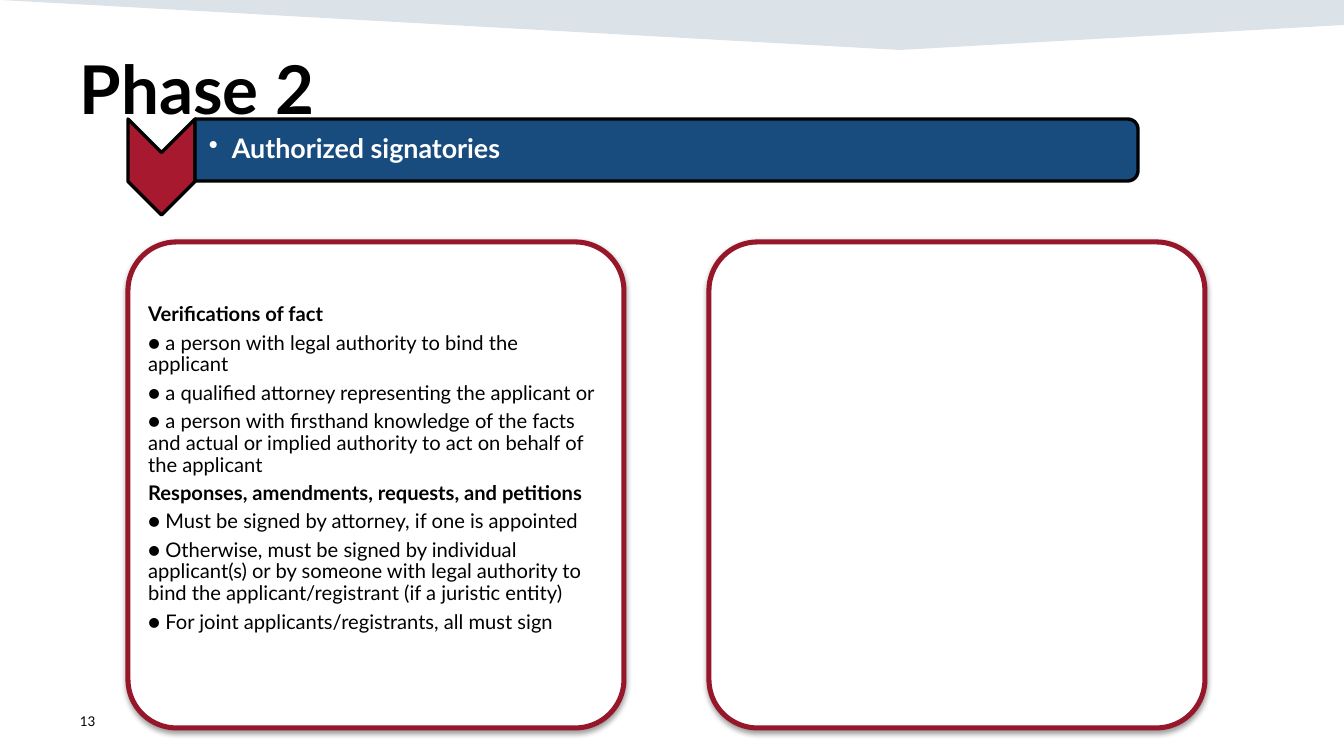
from lxml.etree import SubElement
from pptx import Presentation
from pptx.dml.color import RGBColor
from pptx.enum.shapes import MSO_SHAPE as Kind
from pptx.enum.text import MSO_ANCHOR as Anchor
from pptx.oxml import parse_xml
from pptx.oxml.ns import nsdecls, qn
from pptx.util import Pt

SCALE = 914400 / 121
WIDE, HIGH = 1344, 756
RULES = [
    ("Verifications of fact", True),
    ("● a person with legal authority to bind the applicant", False),
    ("● a qualified attorney representing the applicant or", False),
    ("● a person with firsthand knowledge of the facts and actual or implied "
     "authority to act on behalf of the applicant", False),
    ("Responses, amendments, requests, and petitions", True),
    ("● Must be signed by attorney, if one is appointed", False),
    ("● Otherwise, must be signed by individual applicant(s) or by someone with "
     "legal authority to bind the applicant/registrant (if a juristic entity)", False),
    ("● For joint applicants/registrants, all must sign", False),
]


def px(n):
    """Turn px into EMU."""
    return round(n * SCALE)


def tint(code):
    """Turn a hex string into a colour."""
    return RGBColor.from_string(code)


def paint(shape, fill, line=None, width=0, alpha=100):
    """Set the fill and outline of a shape and drop its theme shadow."""
    shape.shadow.inherit = False
    shape.fill.solid()
    shape.fill.fore_color.rgb = tint(fill)
    if alpha < 100:
        clr = shape._element.spPr.find(qn("a:solidFill")).find(qn("a:srgbClr"))
        SubElement(clr, qn("a:alpha"), val=str(alpha * 1000))
    if line:
        shape.line.color.rgb = tint(line)
        shape.line.width = Pt(width)
    else:
        shape.line.fill.background()


def place(shape, box):
    """Move a shape to a px box."""
    shape.left, shape.top, shape.width, shape.height = map(px, box)


def write(shape, rows, size, color="000000", inset=(12, 6, 12, 6),
          anchor=Anchor.MIDDLE, lead=None, after=None):
    """Fill a shape with rows of text and bold flag, and return its frame."""
    frame = shape.text_frame
    frame.word_wrap = True
    frame.vertical_anchor = anchor
    (frame.margin_left, frame.margin_top,
     frame.margin_right, frame.margin_bottom) = map(px, inset)
    for i, (text, bold) in enumerate(rows):
        para = frame.add_paragraph() if i else frame.paragraphs[0]
        para.alignment = 1
        para.line_spacing = lead
        if after is not None:
            para.space_after = Pt(after)
        run = para.add_run()
        run.text = text
        font = run.font
        font.name, font.size, font.bold = "Lato", Pt(size), bold
        font.color.rgb = tint(color)
    return frame


def turn(slide, kind, box):
    """Add a shape turned by 90 degrees that shows in the given box."""
    x, y, w, h = box
    shape = slide.shapes.add_shape(kind, 0, 0, 0, 0)
    place(shape, (x + (w - h) / 2, y + (h - w) / 2, h, w))
    shape.rotation = 90
    return shape


def wing(slide, box):
    """Draw the pale wedge along the top edge."""
    x, y, w, h = box
    pen = slide.shapes.build_freeform(x, y, SCALE)
    pen.add_line_segments([(x + w, y), (x + w, y + h // 2), (x + 900, y + h)])
    paint(pen.convert_to_shape(), "164469", alpha=15)


def head(slide, box):
    """Set the slide title."""
    title = slide.shapes.title
    place(title, box)
    write(title, [("Phase 2", True)], 40, anchor=Anchor.TOP, lead=1.0, after=0)


def banner(slide, box):
    """Draw the chevron and the bar with its bulleted label."""
    x, y, w, h = box
    tip = 67
    mark = turn(slide, Kind.CHEVRON, (x, y, tip, 96))
    paint(mark, "A6192E", "000000", 2)
    bar = (x + tip, y, w - tip, h)
    paint(turn(slide, Kind.ROUND_2_SAME_RECTANGLE, bar), "003971", "000000", 2, 90)
    label = slide.shapes.add_textbox(0, 0, 0, 0)
    place(label, (x + tip, y + 3, w - tip - 3, h - 6))
    frame = write(label, [("Authorized signatories", True)], 16, "FFFFFF",
                  (14, 1, 1, 1), lead=0.9)
    props = frame.paragraphs[0]._p.get_or_add_pPr()
    props.set("marL", str(px(23)))
    props.set("indent", str(px(-23)))
    SubElement(props, qn("a:buChar"), char="•")


def panel(slide, box, rows=()):
    """Draw a rounded panel with a soft shadow and optional text."""
    card = slide.shapes.add_shape(Kind.ROUNDED_RECTANGLE, *map(px, box))
    card.adjustments[0] = 0.1
    paint(card, "FFFFFF", "97172A", 3)
    glow = parse_xml(
        f'<a:outerShdw {nsdecls("a")} blurRad="{Pt(3.1)}" dist="{Pt(1.6)}" '
        'dir="5400000" rotWithShape="0"><a:srgbClr val="000000">'
        '<a:alpha val="38000"/></a:srgbClr></a:outerShdw>')
    card._element.spPr.find(qn("a:effectLst")).append(glow)
    if rows:
        write(card, rows, 12, inset=(6, 6, 6, 38), lead=0.9, after=3.9)


def foot(slide, box):
    """Set the page number."""
    note = slide.shapes.add_textbox(*map(px, box))
    write(note, [("13", False)], 8)


def main():
    """Build the slide and save it."""
    deck = Presentation()
    deck.slide_width, deck.slide_height = px(WIDE), px(HIGH)
    slide = deck.slides.add_slide(deck.slide_layouts[5])
    wing(slide, (0, 0, WIDE, 50))
    head(slide, (68, 41, 1210, 115))
    banner(slide, (128, 119, 1010, 62))
    for i, rows in enumerate((RULES, ())):
        panel(slide, (128 + i * 581, 242, 496, 486), rows)
    foot(slide, (68, 701, 302, 40))
    deck.save("out.pptx")


if __name__ == "__main__":
    main()
